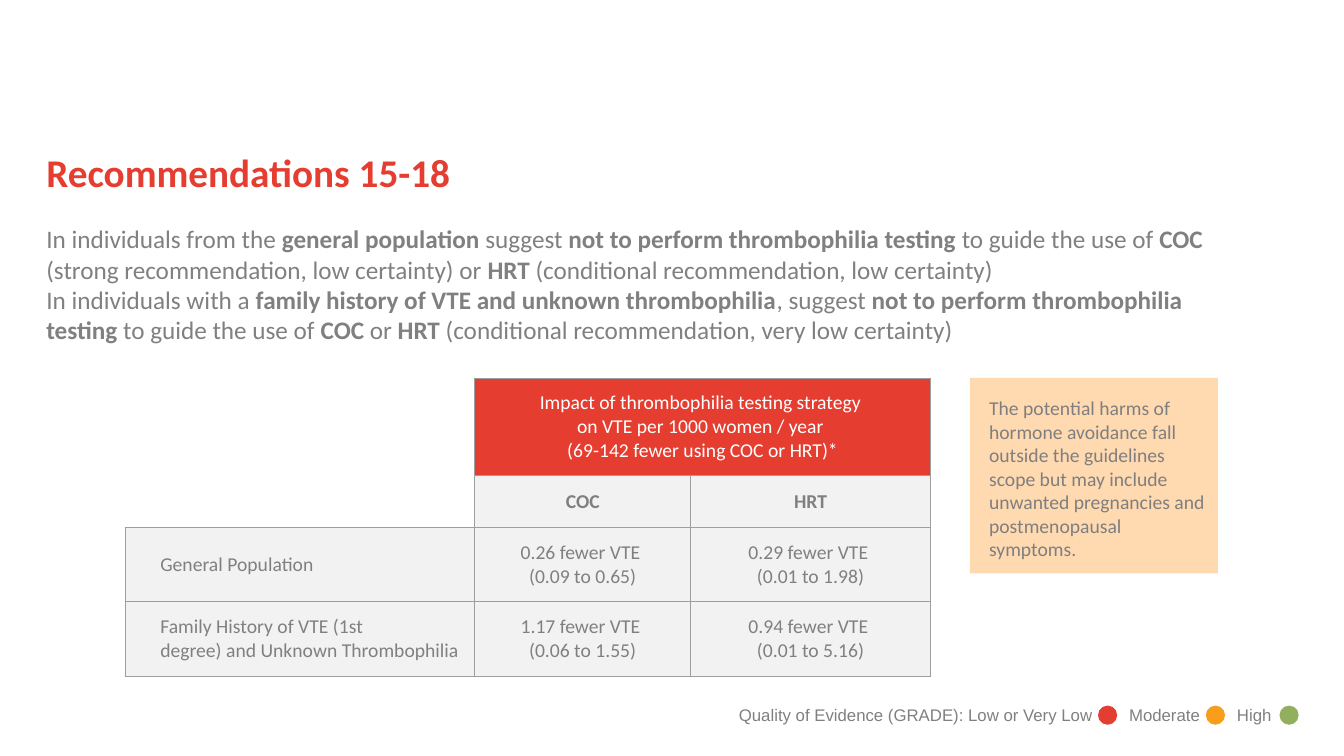
import pptx
import pptx.dml.color
import pptx.enum.shapes
import pptx.enum.text
import pptx.oxml
import pptx.oxml.ns
import pptx.util
from pptx.util import Inches

RED, GREY, PALE, RULE, WHITE = "E53E31", "808080", "F2F2F2", "9E9E9E", "FFFFFF"
CENTER = pptx.enum.text.PP_ALIGN.CENTER
MIDDLE = pptx.enum.text.MSO_ANCHOR.MIDDLE

BODY = [
    [("In individuals from the ", False), ("general population ", True), ("suggest ", False),
     ("not to perform thrombophilia testing ", True), ("to guide the use of ", False),
     ("COC ", True), ("(strong recommendation, low certainty) or ", False), ("HRT ", True),
     ("(conditional recommendation, low certainty)", False)],
    [("In individuals with a ", False),
     ("family history of VTE and unknown thrombophilia", True), (", suggest ", False),
     ("not to perform thrombophilia testing ", True), ("to guide the use of ", False),
     ("COC", True), (" or ", False), ("HRT ", True),
     ("(conditional recommendation, very low certainty)", False)],
]
HEADER = ("Impact of thrombophilia testing strategy \von VTE per 1000 women / year "
          "\v(69-142 fewer using COC or HRT)*")
RESULTS = [
    ("General Population", "0.26 fewer VTE \n(0.09 to 0.65)", "0.29 fewer VTE \n(0.01 to 1.98)"),
    ("Family History of VTE (1st\ndegree) and Unknown Thrombophilia",
     "1.17 fewer VTE \n(0.06 to 1.55)", "0.94 fewer VTE \n(0.01 to 5.16)"),
]
HARMS = ("The potential harms of hormone avoidance fall outside the guidelines scope "
         "but may include\nunwanted pregnancies and postmenopausal symptoms.")


def rgb(color):
    """Turn a hex string into a colour."""
    return pptx.dml.color.RGBColor.from_string(color)


def style(p, size, color, bold=False, name="Calibri"):
    """Set the font of a paragraph."""
    p.font.name, p.font.size = name, pptx.util.Pt(size)
    p.font.color.rgb = rgb(color)
    if bold:
        p.font.bold = True


def set_margins(frame, left, top, right, bottom):
    """Set the inner margins of a text frame or cell, in inches."""
    frame.margin_left, frame.margin_top = Inches(left), Inches(top)
    frame.margin_right, frame.margin_bottom = Inches(right), Inches(bottom)


def add_text(s, x, y, w, h):
    """Add a wrapping text box without margins and return its frame."""
    tf = s.shapes.add_textbox(Inches(x), Inches(y), Inches(w), Inches(h)).text_frame
    tf.word_wrap = True
    set_margins(tf, 0, 0, 0, 0)
    return tf


def add_filled(s, kind, x, y, w, h, color):
    """Add a plain filled shape."""
    sp = s.shapes.add_shape(kind, Inches(x), Inches(y), Inches(w), Inches(h))
    sp.shadow.inherit = False
    sp.fill.solid()
    sp.fill.fore_color.rgb = rgb(color)
    sp.line.fill.background()
    return sp


def add_title(s, x, y, w, h):
    """Place the slide heading."""
    p = add_text(s, x, y, w, h).paragraphs[0]
    p.text = "Recommendations 15-18"
    style(p, 28, RED, bold=True)


def add_body(s, x, y, w, h):
    """Place the recommendations with their bold phrases."""
    tf = add_text(s, x, y, w, h)
    for i, parts in enumerate(BODY):
        p = tf.add_paragraph() if i else tf.paragraphs[0]
        style(p, 18, GREY)
        for text, bold in parts:
            r = p.add_run()
            r.text, r.font.bold = text, bold


def set_borders(cell, sides):
    """Rule the named sides of a cell and clear the others."""
    tc_pr = cell._tc.get_or_add_tcPr()
    for i, side in enumerate("LRTB"):
        fill = (f'<a:solidFill><a:srgbClr val="{RULE}"/></a:solidFill>'
                if side in sides else "<a:noFill/>")
        tc_pr.insert(i, pptx.oxml.parse_xml(
            f'<a:ln{side} {pptx.oxml.ns.nsdecls("a")} w="9525">{fill}</a:ln{side}>'))


def fill_cell(cell, text, fill=PALE, color=GREY, bold=False, label=False):
    """Write and format one table cell."""
    cell.text = text
    cell.vertical_anchor = MIDDLE
    set_margins(cell, 0.35 if label else 0.13, 0.13, 0.13, 0.13)
    cell.fill.solid()
    cell.fill.fore_color.rgb = rgb(fill)
    for p in cell.text_frame.paragraphs:
        if not label:
            p.alignment = CENTER
        style(p, 14, color, bold)


def add_results(s, x, y, widths, heights):
    """Place the table of testing impact."""
    table = s.shapes.add_table(len(heights), len(widths), Inches(x), Inches(y),
                               Inches(sum(widths)), Inches(sum(heights))).table
    table.first_row = table.horz_banding = False
    for column, width in zip(table.columns, widths):
        column.width = Inches(width)
    for row, height in zip(table.rows, heights):
        row.height = Inches(height)
    for r in range(len(heights)):
        for c in range(len(widths)):
            cell = table.cell(r, c)
            cell.fill.background()
            corner = r < 2 and c == 0
            set_borders(cell, ("RB" if r else "R") if corner else "LRTB")
    table.cell(0, 0).merge(table.cell(1, 0))
    table.cell(0, 1).merge(table.cell(0, 2))
    fill_cell(table.cell(0, 1), HEADER, RED, WHITE)
    for c, name in enumerate(("COC", "HRT"), 1):
        fill_cell(table.cell(1, c), name, bold=True)
    for r, values in enumerate(RESULTS, 2):
        for c, text in enumerate(values):
            fill_cell(table.cell(r, c), text, label=c == 0)


def add_harms(s, x, y, w, h):
    """Place the side note on harms."""
    sp = add_filled(s, pptx.enum.shapes.MSO_SHAPE.RECTANGLE, x, y, w, h, "FFD9B0")
    tf = sp.text_frame
    tf.word_wrap = True
    tf.vertical_anchor = MIDDLE
    set_margins(tf, 0.19, 0.1, 0.1, 0.05)
    tf.text = HARMS
    for p in tf.paragraphs:
        p.alignment = pptx.enum.text.PP_ALIGN.LEFT
        style(p, 14, "7F7F7F")


def add_legend(s, x, y, w, h):
    """Place the evidence key with its coloured dots."""
    tf = add_text(s, x, y, w, h)
    set_margins(tf, 0.1, 0.05, 0.1, 0.05)
    p = tf.paragraphs[0]
    p.text = "Quality of Evidence (GRADE): Low or Very Low\tModerate\tHigh"
    stops = "".join(f'<a:tab pos="{Inches(stop)}" algn="l"/>' for stop in (3.87, 4.94))
    p._p.get_or_add_pPr().append(pptx.oxml.parse_xml(
        f'<a:tabLst {pptx.oxml.ns.nsdecls("a")}>{stops}</a:tabLst>'))
    style(p, 12, GREY, name="Arial")
    for dx, color in ((3.66, "E43E32"), (4.73, "F99D1C"), (5.46, "91AF5F")):
        add_filled(s, pptx.enum.shapes.MSO_SHAPE.OVAL, x + dx, y + 0.06, 0.19, 0.19, color)


def main():
    """Build and save the slide."""
    prs = pptx.Presentation()
    prs.slide_width, prs.slide_height = Inches(13.33), Inches(7.5)
    s = prs.slides.add_slide(prs.slide_layouts[6])
    add_results(s, 1.24, 3.75, (3.47, 2.14, 2.38), (0.97, 0.51, 0.74, 0.74))
    add_title(s, 0.46, 1.47, 12, 0.78)
    add_body(s, 0.46, 2.22, 12, 1.53)
    add_harms(s, 9.62, 3.75, 2.46, 1.94)
    add_legend(s, 7.23, 6.94, 5.93, 0.3)
    prs.save("out.pptx")


if __name__ == "__main__":
    main()
